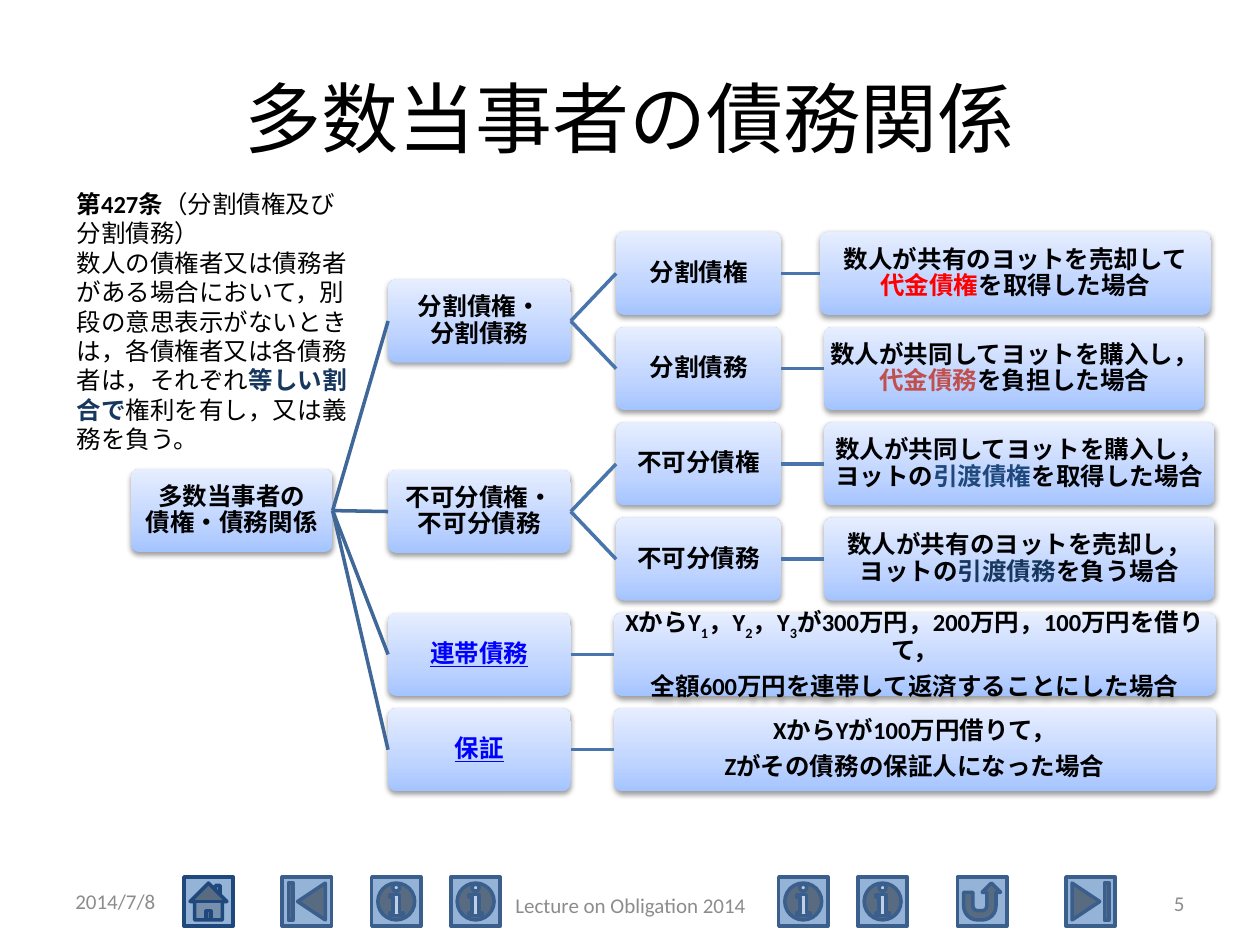
from dataclasses import dataclass
from typing import Optional

from pptx import Presentation
from pptx.dml.color import RGBColor
from pptx.enum.shapes import MSO_CONNECTOR, MSO_SHAPE
from pptx.enum.text import MSO_ANCHOR, PP_ALIGN
from pptx.oxml import parse_xml
from pptx.oxml.ns import nsdecls
from pptx.util import Inches, Pt

HUES = {
    "ink": "000000", "gray": "8C8C8C", "red": "FF0000", "brick": "C0504D",
    "blue": "1F497D", "navy": "17375E", "link": "0000FF",
    "trunk": "3F6797", "twig": "4875AC", "key": "95B3D7", "rim": "3A5F8C",
    "low": "A4C4FF", "mid": "BFD4FF", "high": "E6EEFF",
}
FONT = "Calibri"
TOP, STEP, TALL = 1.84, 0.756, 0.66
KEY_TOP, KEY_SIZE = 6.96, 0.39


@dataclass
class Run:
    text: str
    hue: str = "ink"
    bold: bool = True
    base: int = 0
    line: bool = False


@dataclass
class Node:
    left: float
    row: float
    wide: float
    text: list
    root: Optional[str] = None
    name: str = ""
    edge: str = "twig"


@dataclass
class Key:
    left: float
    kind: MSO_SHAPE
    rim: str = "rim"


@dataclass
class Label:
    left: float
    top: float
    wide: float
    tall: float
    size: int
    runs: list
    align: PP_ALIGN = PP_ALIGN.LEFT
    mount: MSO_ANCHOR = MSO_ANCHOR.MIDDLE


def color(name: str) -> RGBColor:
    return RGBColor.from_string(HUES[name])


def write(para, runs: list, size: int, align: PP_ALIGN) -> None:
    para.alignment = align
    para.font.size = Pt(size)
    para.font.name = FONT
    for item in runs:
        for index, part in enumerate(item.text.split("\n")):
            if index:
                para.add_line_break()
            if not part:
                continue
            run = para.add_run()
            run.text = part
            run.font.bold = item.bold
            run.font.color.rgb = color(item.hue)
            if item.line:
                run.font.underline = True
            if item.base:
                run.font._element.set("baseline", str(item.base * 1000))


def glaze(shape) -> None:
    stops = "".join(
        f'<a:gs pos="{spot * 1000}"><a:srgbClr val="{HUES[hue]}"/></a:gs>'
        for spot, hue in ((0, "low"), (35, "mid"), (100, "high")))
    parts = (
        f'<a:gradFill {nsdecls("a")} rotWithShape="1"><a:gsLst>{stops}</a:gsLst>'
        '<a:lin ang="16200000" scaled="0"/></a:gradFill>',
        f'<a:ln {nsdecls("a")}><a:noFill/></a:ln>',
        f'<a:effectLst {nsdecls("a")}><a:outerShdw blurRad="40000" dist="20000" '
        'dir="5400000" rotWithShape="0"><a:srgbClr val="000000">'
        '<a:alpha val="38000"/></a:srgbClr></a:outerShdw></a:effectLst>',
    )
    for part in parts:
        shape._element.spPr.append(parse_xml(part))


def draw_node(slide, node: Node):
    shape = slide.shapes.add_shape(
        MSO_SHAPE.ROUNDED_RECTANGLE, Inches(node.left),
        Inches(TOP + STEP * node.row), Inches(node.wide), Inches(TALL))
    shape.adjustments[0] = 0.1
    glaze(shape)
    frame = shape.text_frame
    frame.word_wrap = True
    frame.vertical_anchor = MSO_ANCHOR.MIDDLE
    frame.margin_left = frame.margin_right = Inches(0.03)
    frame.margin_top = frame.margin_bottom = Inches(0.03)
    for index, runs in enumerate(node.text):
        para = frame.add_paragraph() if index else frame.paragraphs[0]
        para.line_spacing = 0.9
        para.space_after = Pt(5.7)
        write(para, runs, 14, PP_ALIGN.CENTER)
    return shape


def join(slide, start, end, hue: str) -> None:
    edge = slide.shapes.add_connector(MSO_CONNECTOR.STRAIGHT, 0, 0, 0, 0)
    edge.begin_connect(start, 3)
    edge.end_connect(end, 1)
    edge.line.color.rgb = color(hue)
    edge.line.width = Pt(2)
    edge._element.spPr.append(parse_xml(f'<a:effectLst {nsdecls("a")}/>'))


def draw_key(slide, key: Key) -> None:
    shape = slide.shapes.add_shape(
        key.kind, Inches(key.left), Inches(KEY_TOP), Inches(KEY_SIZE), Inches(KEY_SIZE))
    shape.shadow.inherit = False
    shape.fill.solid()
    shape.fill.fore_color.rgb = color("key")
    shape.line.color.rgb = color(key.rim)
    shape.line.width = Pt(2)


def draw_label(slide, label: Label) -> None:
    box = slide.shapes.add_textbox(
        Inches(label.left), Inches(label.top), Inches(label.wide), Inches(label.tall))
    box.text_frame.word_wrap = True
    box.text_frame.vertical_anchor = label.mount
    write(box.text_frame.paragraphs[0], label.runs, label.size, label.align)


INFO = MSO_SHAPE.ACTION_BUTTON_INFORMATION
KEYS = [
    Key(1.46, MSO_SHAPE.ACTION_BUTTON_HOME, "blue"),
    Key(2.24, MSO_SHAPE.ACTION_BUTTON_BEGINNING),
    *(Key(left, INFO) for left in (2.95, 3.58, 6.18, 6.81)),
    Key(7.6, MSO_SHAPE.ACTION_BUTTON_RETURN),
    Key(8.46, MSO_SHAPE.ACTION_BUTTON_END),
]
LABELS = [
    Label(0.5, 0.3, 9, 1.25, 44, [Run("多数当事者の債務関係", bold=False)], PP_ALIGN.CENTER),
    Label(0.5, 6.95, 2.33, 0.4, 12, [Run("2014/7/8", "gray", False)]),
    Label(3.42, 6.98, 3.17, 0.4, 12, [Run("Lecture on Obligation 2014", "gray", False)],
          PP_ALIGN.CENTER),
    Label(7.17, 6.97, 2.33, 0.4, 12, [Run("5", "gray", False)], PP_ALIGN.RIGHT),
    Label(0.51, 1.45, 2.36, 2.22, 14, [
        Run("第427条"),
        Run("（分割債権及び分割債務）\n数人の債権者又は債務者がある場合において，別段の意思表示がないときは，"
            "各債権者又は各債務者は，それぞれ", bold=False),
        Run("等しい割合で", "navy"),
        Run("権利を有し，又は義務を負う。", bold=False),
    ], mount=MSO_ANCHOR.TOP),
]
LOAN = [Run("XからY"), Run("1", base=-25), Run("，Y"), Run("2", base=-25),
        Run("，Y"), Run("3", base=-25), Run("が300万円，200万円，100万円を借りて，")]
NODES = [
    Node(1.04, 2.49, 1.6, [[Run("多数当事者の\n債権・債務関係")]], name="root"),
    *(Node(3.08, row, 1.45, [[run]], "root", name, "trunk") for row, name, run in (
        (0.5, "split", Run("分割債権・\n分割債務")),
        (2.5, "whole", Run("不可分債権・\n不可分債務")),
        (4, "joint", Run("連帯債務", "link", line=True)),
        (5, "surety", Run("保証", "link", line=True)))),
    *(Node(4.89, row, 1.31, [[Run(text)]], root, text) for row, (root, text) in enumerate((
        ("split", "分割債権"), ("split", "分割債務"),
        ("whole", "不可分債権"), ("whole", "不可分債務")))),
    Node(6.51, 0, 3.1, [[Run("数人が共有のヨットを売却して\n"), Run("代金債権", "red"),
                         Run("を取得した場合")]], "分割債権"),
    Node(6.54, 1, 3.02, [[Run("数人が共同してヨットを購入し，\n"), Run("代金債務", "brick"),
                          Run("を負担した場合")]], "分割債務"),
    Node(6.54, 2, 3.1, [[Run("数人が共同してヨットを購入し，\nヨットの"), Run("引渡債権", "blue"),
                         Run("を取得した場合")]], "不可分債権"),
    Node(6.54, 3, 3.1, [[Run("数人が共有のヨットを売却し，\nヨットの"), Run("引渡債務", "navy"),
                         Run("を負う場合")]], "不可分債務"),
    Node(4.87, 4, 4.78, [LOAN, [Run("全額600万円を連帯して返済することにした場合")]], "joint"),
    Node(4.87, 5, 4.78, [[Run("XからYが100万円借りて，")],
                         [Run("Zがその債務の保証人になった場合")]], "surety"),
]


def main() -> None:
    deck = Presentation()
    deck.slide_width, deck.slide_height = Inches(10), Inches(7.5)
    slide = deck.slides.add_slide(deck.slide_layouts[6])
    for key in KEYS:
        draw_key(slide, key)
    drawn = {}
    for node in NODES:
        shape = draw_node(slide, node)
        drawn[node.name] = shape
        if node.root:
            join(slide, drawn[node.root], shape, node.edge)
    for label in LABELS:
        draw_label(slide, label)
    deck.save("out.pptx")


if __name__ == "__main__":
    main()
